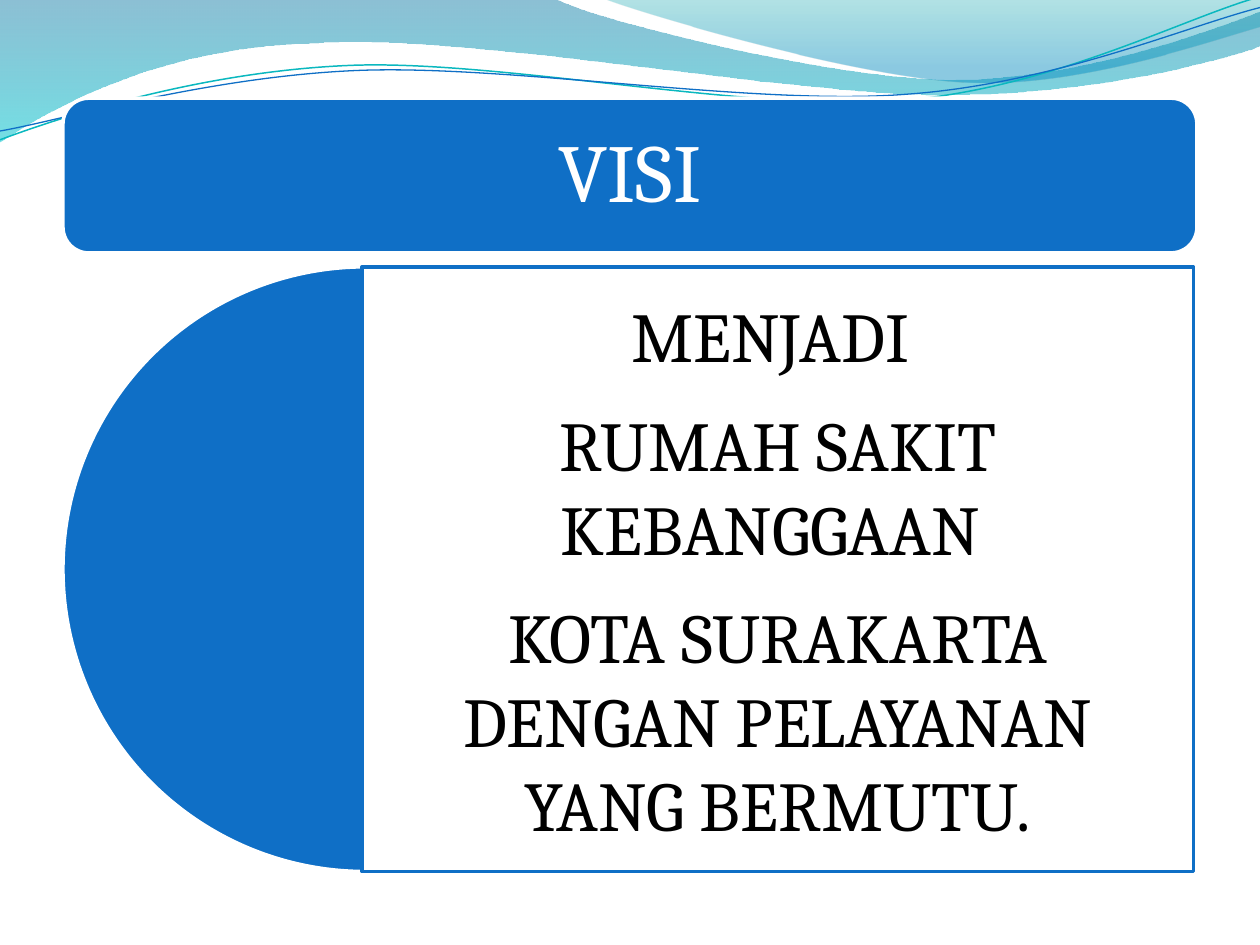
from dataclasses import dataclass

from lxml import etree
from pptx import Presentation
from pptx import util as u
from pptx.dml.color import RGBColor
from pptx.enum import shapes, text
from pptx.oxml.ns import qn


@dataclass(frozen=True)
class Theme:
    blue: str = "0F6FC6"
    teal: str = "0AB8BF"
    white: str = "FFFFFF"
    black: str = "000000"
    font: str = "Cambria"
    title_size: int = 47
    body_size: int = 40
    outline: float = 2


UNIT = 2.54  # wave points are given in inches

# Each wave: start point, then lines (x, y) and Bezier curves (three points)
BACK_WAVE = [
    (0, 0), (4.4, -0.01),
    (4.76, 0.17, 6.64, 0.63, 7.58, 0.63), (8.53, 0.63, 9.58, 0.26, 10, 0.09),
    (10.01, 0.36),
    (9.83, 0.44, 8.7, 0.76, 7.46, 0.75), (6.22, 0.75, 3.82, 0.28, 2.57, 0.34),
    (1.29, 0.36, 0.46, 0.83, -0.01, 1.13), (0, 0),
]
FRONT_WAVE = [
    (4.79, -0.01),
    (5.09, 0.11, 6.82, 0.62, 7.69, 0.65), (8.56, 0.69, 9.61, 0.32, 10, 0.21),
    (10, 0), (4.79, -0.01),
]
TEAL_LINE = [
    (0, 1.11),
    (0.48, 0.93, 1.58, 0.57, 2.77, 0.52), (3.95, 0.47, 5.93, 0.89, 7.13, 0.8),
    (8.33, 0.71, 9.38, 0.15, 9.98, -0.02),
]
BLUE_LINE = [
    (0, 1.04),
    (0.47, 0.96, 1.64, 0.61, 2.83, 0.56), (4.03, 0.51, 5.97, 0.84, 7.17, 0.75),
    (8.36, 0.67, 9.41, 0.21, 10, 0.06),
]


def set_alpha(color, percent):
    etree.SubElement(color, qn("a:alpha")).set("val", str(percent * 1000))


class SlideBuilder:
    def __init__(self, page, theme):
        self.page = page
        self.theme = theme

    def outline(self, shape, color, width):
        shape.shadow.inherit = False
        shape.line.color.rgb = RGBColor.from_string(color)
        shape.line.width = u.Pt(width)

    def freeform(self, segments, close):
        """Join the segment ends, then bend the curved segments."""
        ends = [tuple(u.Cm(v * UNIT) for v in segment[-2:]) for segment in segments]
        builder = self.page.shapes.build_freeform(*ends[0], scale=1.0)
        builder.add_line_segments(ends[1:], close=close)
        shape = builder.convert_to_shape()
        steps = list(shape.element.spPr.iter(qn("a:lnTo")))
        for step, segment in zip(steps, segments[1:]):
            if len(segment) == 2:
                continue
            curve = etree.Element(qn("a:cubicBezTo"))
            for x, y in zip(segment[::2], segment[1::2]):
                point = etree.SubElement(curve, qn("a:pt"))
                point.set("x", str(u.Cm(x * UNIT) - shape.left))
                point.set("y", str(u.Cm(y * UNIT) - shape.top))
            step.getparent().replace(step, curve)
        return shape

    def wave(self, segments, stops):
        """Filled wave; stops are (position, colour, opacity), top to bottom."""
        shape = self.freeform(segments, close=True)
        shape.shadow.inherit = False
        shape.line.fill.background()
        shape.fill.gradient()
        shape.fill.gradient_angle = 270
        for stop, (position, color, _) in zip(shape.fill.gradient_stops, stops):
            stop.position = position
            stop.color.rgb = RGBColor.from_string(color)
        colors = shape.element.spPr.iterfind(".//" + qn("a:gs") + "/" + qn("a:srgbClr"))
        for color, (_, _, opacity) in zip(colors, stops):
            set_alpha(color, opacity)

    def wave_line(self, segments, color, width):
        shape = self.freeform(segments, close=False)
        shape.fill.background()
        self.outline(shape, color, width)

    def block(self, kind, area, fill, line, adjustments=(), opacity=100):
        shape = self.page.shapes.add_shape(kind, *map(u.Cm, area))
        for index, value in enumerate(adjustments):
            shape.adjustments[index] = value
        shape.fill.solid()
        shape.fill.fore_color.rgb = RGBColor.from_string(fill)
        if opacity < 100:
            set_alpha(shape.element.spPr.find(qn("a:solidFill"))[0], opacity)
        self.outline(shape, line, self.theme.outline)

    def words(self, box, area, lines, size, color, inset, spacing=1.0):
        """Fill a placeholder with centred lines and bring it to the front."""
        box.left, box.top, box.width, box.height = map(u.Cm, area)
        box.element.getparent().append(box.element)
        frame = box.text_frame
        frame.text = "\n".join(lines)
        frame.word_wrap = True
        frame.auto_size = text.MSO_AUTO_SIZE.NONE
        frame.vertical_anchor = text.MSO_ANCHOR.MIDDLE
        frame.margin_left = frame.margin_right = u.Cm(inset)
        frame.margin_top = frame.margin_bottom = u.Cm(inset)
        for paragraph in frame.paragraphs:
            paragraph.alignment = text.PP_ALIGN.CENTER
            paragraph.line_spacing = spacing
            paragraph.space_before = u.Pt(0)
            paragraph.space_after = u.Pt(size * 0.35)
            paragraph.font.name = self.theme.font
            paragraph.font.size = u.Pt(size)
            paragraph.font.color.rgb = RGBColor.from_string(color)
            # No bullet and no hanging indent
            properties = paragraph._p.get_or_add_pPr()
            properties.set("marL", "0")
            properties.set("indent", "0")
            bullet = etree.Element(qn("a:buNone"))
            properties.find(qn("a:defRPr")).addprevious(bullet)


def main():
    deck = Presentation()
    deck.slide_width, deck.slide_height = u.Cm(25.4), u.Cm(19.05)
    page = deck.slides.add_slide(deck.slide_layouts[1])
    theme = Theme()
    slide = SlideBuilder(page, theme)
    title, body = page.placeholders
    preset = shapes.MSO_SHAPE

    # Waves along the top
    slide.wave(BACK_WAVE, [(0, "0074A1", 45), (1, "00C6CF", 55)])
    slide.wave(FRONT_WAVE, [(0, "00A1A9", 30), (0.8, "008BBF", 45)])
    slide.wave_line(TEAL_LINE, theme.teal, 0.85)
    slide.wave_line(BLUE_LINE, theme.blue, 0.75)

    # Title banner
    slide.block(preset.ROUNDED_RECTANGLE, (1.27, 1.98, 22.86, 3.12),
                theme.blue, theme.white)
    slide.words(title, (1.42, 2.13, 22.56, 2.82), ["VISI"],
                theme.title_size, theme.white, inset=0.5, spacing=0.9)

    # Vision statement beside a half disc
    panel = (7.3, 5.38, 16.76, 12.19)
    slide.block(preset.PIE, (1.27, 5.38, 12.19, 12.19), theme.blue, theme.white,
                adjustments=(54, 162))
    slide.block(preset.RECTANGLE, panel, theme.white, theme.blue, opacity=90)
    slide.words(body, panel, [
        "MENJADI ",
        "RUMAH SAKIT KEBANGGAAN ",
        "KOTA SURAKARTA DENGAN PELAYANAN YANG BERMUTU.",
    ], theme.body_size, theme.black, inset=0.43)

    deck.save("out.pptx")


if __name__ == "__main__":
    main()
